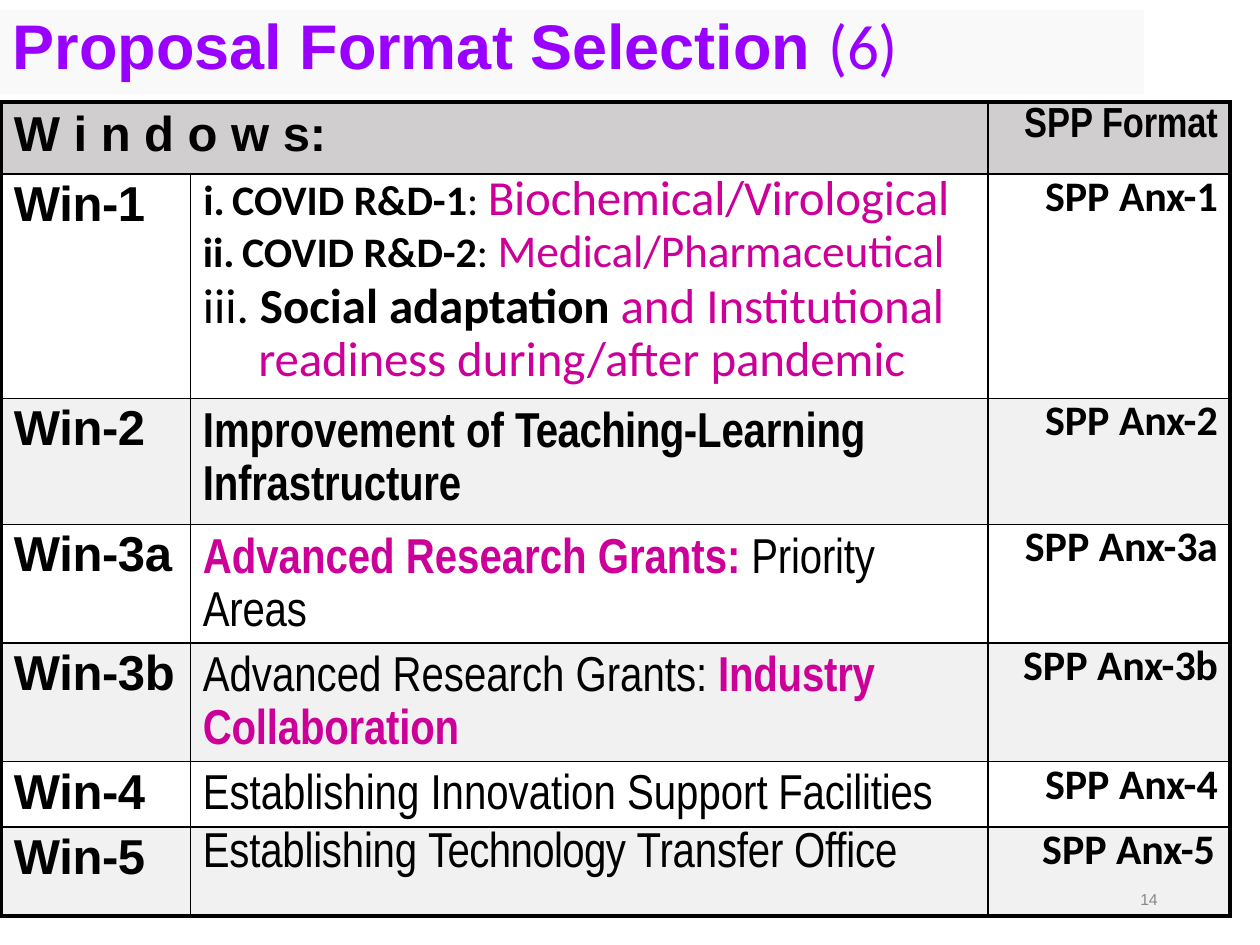
from lxml import etree
from pptx import Presentation
from pptx import util as u
from pptx.dml.color import RGBColor
from pptx.enum import shapes, text
from pptx.oxml.ns import qn

BLACK = RGBColor(0, 0, 0)
WHITE = RGBColor(0xFF, 0xFF, 0xFF)
PURPLE = RGBColor(0x99, 0x00, 0xFF)
MAGENTA = RGBColor(0xCC, 0x00, 0x99)
GREY = RGBColor(0x88, 0x88, 0x88)
HEAD = RGBColor(0xD0, 0xCE, 0xCE)
STRIPE = RGBColor(0xF1, 0xF1, 0xF1)
BAND = RGBColor(0xF9, 0xF9, 0xF9)

ARIAL, NARROW, CALIBRI = "Arial", "Arial Narrow", "Calibri"
COLS = [3.81, 16.08, 4.88]
ROWS = [1.45, 4.52, 2.54, 2.39, 2.39, 1.32, 1.8]
PAD = 0.25


def run(txt, spc=0, bold=True, color=BLACK, size=None):
    return txt, spc, bold, color, size


def write(p, runs, size, font, left=0, hang=0, line=None, before=0, right=False):
    p.alignment = text.PP_ALIGN.RIGHT if right else text.PP_ALIGN.LEFT
    p.space_before = u.Pt(before)
    if line:
        p.line_spacing = u.Pt(line)
    pPr = p._p.get_or_add_pPr()
    pPr.set("marL", str(u.Cm(left)))
    pPr.set("indent", str(-u.Cm(hang)))
    for txt, spc, bold, color, own_size in runs:
        r = p.add_run()
        r.text = txt
        f = r.font
        f.name, f.size, f.bold = font, u.Pt(own_size or size), bold
        f.color.rgb = color
        r._r.get_or_add_rPr().set("spc", str(round(spc * 100)))


def number(p, *tabs):
    pPr = p._p.get_or_add_pPr()
    etree.SubElement(pPr, qn("a:buAutoNum"), type="romanLcPeriod")
    tab_list = etree.SubElement(pPr, qn("a:tabLst"))
    for pos in tabs:
        etree.SubElement(tab_list, qn("a:tab"), pos=str(u.Cm(pos)), algn="l")


def border(cell, thick_sides):
    tcPr = cell._tc.get_or_add_tcPr()
    for i, side in enumerate("LRTB"):
        width = u.Pt(2.25 if side in thick_sides else 1)
        ln = etree.Element(qn("a:ln" + side), w=str(width))
        fill = etree.SubElement(ln, qn("a:solidFill"))
        etree.SubElement(fill, qn("a:srgbClr"), val=str(BLACK))
        tcPr.insert(i, ln)


def style_grid(table):
    last_row, last_col = len(ROWS) - 1, len(COLS) - 1
    for i in range(len(ROWS)):
        for j in range(len(COLS)):
            cell = table.cell(i, j)
            cell.margin_left = cell.margin_top = cell.margin_bottom = 0
            cell.margin_right = u.Cm(PAD if j else 0)
            cell.fill.solid()
            cell.fill.fore_color.rgb = HEAD if i == 0 else WHITE if i % 2 else STRIPE
            edges = {"L": j == 0, "R": j == last_col, "T": i == 0, "B": i == last_row}
            border(cell, [side for side, outer in edges.items() if outer])


def fill_topics(cell):
    tf = cell.text_frame
    p = tf.paragraphs[0]
    write(p, [run("COVID "), run("R&D-", -0.1), run("1"), run(": ", bold=False),
              run("Biochemical/Virological", -0.1, False, MAGENTA, 28)],
          24, CALIBRI, 0.84, 0.58, 31.4)
    number(p, 0.84)
    p = tf.add_paragraph()
    write(p, [run("COVID "), run("R&D-", -0.1), run("2"), run(": ", bold=False),
              run("Medical/Pharmaceutical", -0.1, False, MAGENTA, 26)],
          24, CALIBRI, 1.04, 0.79, 29.1)
    number(p, 1.04)
    p = tf.add_paragraph()
    write(p, [run("\t", bold=False), run("Social "), run("adaptation ", -0.1),
              run("and ", 0, False, MAGENTA),
              run("Institutional readiness ", -0.1, False, MAGENTA),
              run("during/after ", 0, False, MAGENTA),
              run("pandemic", -0.1, False, MAGENTA)],
          28, CALIBRI, 1.37, 1.12, 30.3, 2.2)
    number(p, 1.37, 1.4)


def build_table(s, x, y):
    frame = s.shapes.add_table(len(ROWS), len(COLS), u.Cm(x), u.Cm(y),
                               u.Cm(sum(COLS)), u.Cm(sum(ROWS)))
    table = frame.table
    for col, width in zip(table.columns, COLS):
        col.width = u.Cm(width)
    for row, height in zip(table.rows, ROWS):
        row.height = u.Cm(height)
    style_grid(table)

    head, fmt = table.cell(0, 0), table.cell(0, 2)
    head.merge(table.cell(0, 1))
    head.margin_top = fmt.margin_top = u.Cm(0.1)
    write(head.text_frame.paragraphs[0], [run("W i n d o w "), run("s:", -0.2)],
          28, ARIAL, PAD, before=2.9)
    write(fmt.text_frame.paragraphs[0], [run("SPP "), run("Format", -0.1)],
          24, NARROW, before=3.1, right=True)

    for i, name in enumerate(["1", "2", "3a", "3b", "4", "5"], 1):
        write(table.cell(i, 0).text_frame.paragraphs[0],
              [run("Win-", -0.2), run(name, -0.2)], 28, ARIAL, PAD, line=33.1)
        is_last = i == len(ROWS) - 1
        write(table.cell(i, 2).text_frame.paragraphs[0],
              [run("SPP "), run("Anx-", -0.2), run(name, -0.3)], 24, CALIBRI,
              1.09 if is_last else 0, line=28, right=not is_last)

    fill_topics(table.cell(1, 1))
    wrapped = dict(line=30.2, before=3.5)
    windows = [
        (0.13, wrapped, [run("Improvement of "), run("Teaching-", -0.3),
                         run("Learning Infrastructure", -0.1)]),
        (0.13, wrapped, [run("Advanced Research Grants: ", color=MAGENTA),
                         run("Priority Areas", -0.1, False)]),
        (0.13, wrapped, [run("Advanced Research Grants: ", bold=False),
                         run("Industry Collaboration", -0.1, color=MAGENTA)]),
        (0, dict(line=33.3), [run("Establishing Innovation Support ", bold=False),
                              run("Facilities", -0.1, False)]),
        (0.1, dict(before=3), [run("Establishing ", -0.1, False),
                               run("Technology ", -0.3, False),
                               run("Transfer Office", -0.1, False)]),
    ]
    for i, (top, spacing, runs) in enumerate(windows, 2):
        cell = table.cell(i, 1)
        cell.margin_top = u.Cm(top)
        write(cell.text_frame.paragraphs[0], runs, 28, NARROW, PAD, **spacing)

    p = table.cell(len(ROWS) - 1, 2).text_frame.add_paragraph()
    write(p, [run("14", -0.2, False, GREY)], 9, ARIAL, 3.07, before=8.7)


def build_title(s, x, y, w, h):
    sp = s.shapes.add_shape(shapes.MSO_SHAPE.RECTANGLE,
                            u.Cm(x), u.Cm(y), u.Cm(w), u.Cm(h))
    sp.shadow.inherit = False
    sp.fill.solid()
    sp.fill.fore_color.rgb = BAND
    sp.line.fill.background()
    s.shapes._spTree.insert(2, sp._element)

    title = s.shapes.title
    title.left, title.top = u.Cm(x + 0.23), u.Cm(y - 0.1)
    title.width, title.height = u.Cm(17.9), u.Cm(1.6)
    tf = title.text_frame
    tf.margin_left = tf.margin_right = tf.margin_bottom = 0
    tf.margin_top = u.Cm(0.03)
    tf.vertical_anchor = text.MSO_ANCHOR.TOP
    tf.auto_size = text.MSO_AUTO_SIZE.NONE
    p = tf.paragraphs[0]
    write(p, [run("Proposal Format Selection ", color=PURPLE),
              run("(6)", -0.2, False, PURPLE)], 36, ARIAL, 0.03, before=1)
    p.runs[1].font.name = CALIBRI


def main():
    prs = Presentation()
    prs.slide_width, prs.slide_height = u.Cm(25.4), u.Cm(19.05)
    s = prs.slides.add_slide(prs.slide_layouts[5])
    build_title(s, 0, 0.2, 23.06, 1.7)
    build_table(s, 0.03, 2.06)
    prs.save("out.pptx")


if __name__ == "__main__":
    main()
